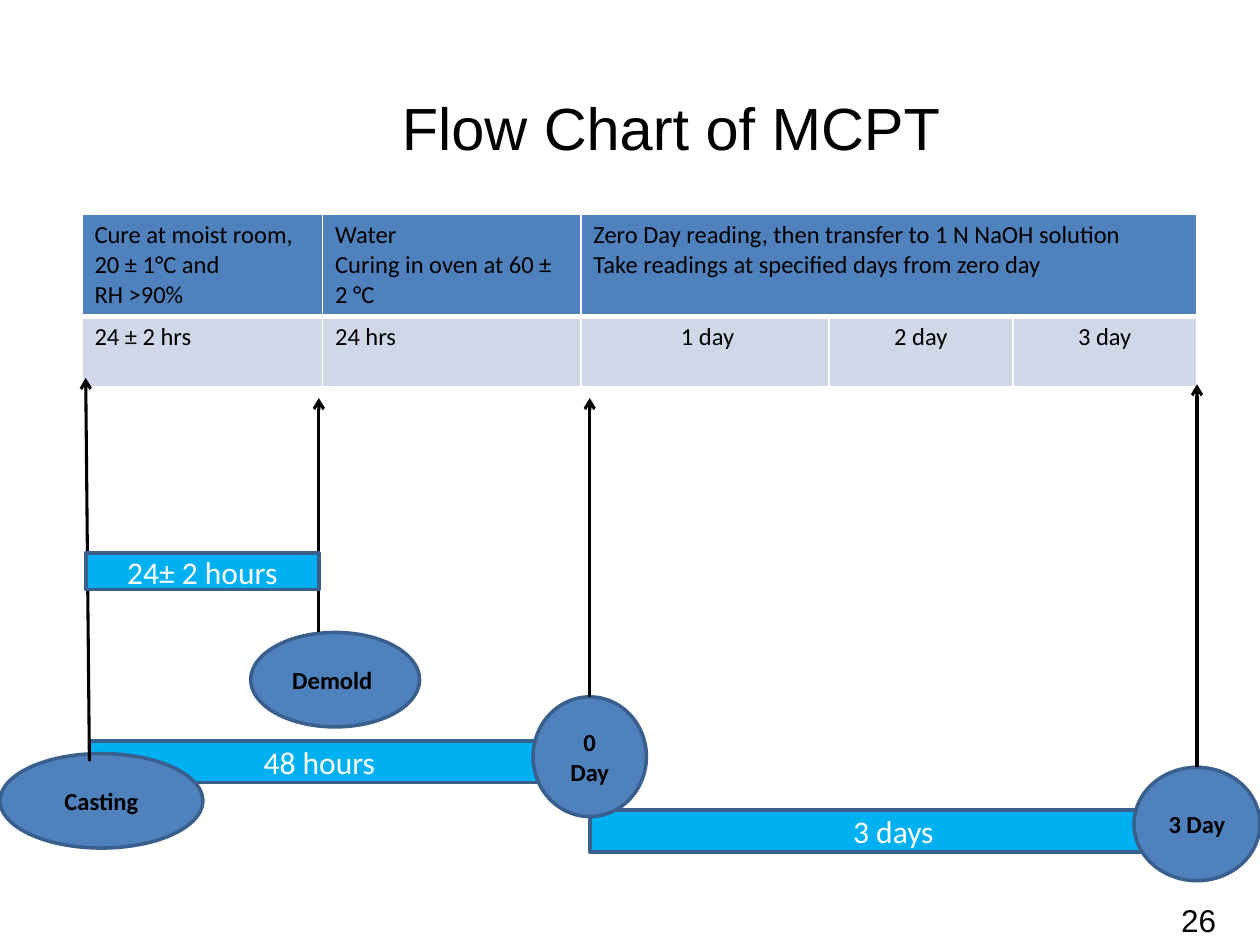
from dataclasses import dataclass

from pptx import Presentation
from pptx.dml.color import RGBColor
from pptx.enum.shapes import MSO_CONNECTOR, MSO_SHAPE
from pptx.enum.text import MSO_ANCHOR, MSO_AUTO_SIZE, PP_ALIGN
from pptx.oxml import parse_xml
from pptx.oxml.ns import nsdecls
from pptx.oxml.xmlchemy import OxmlElement
from pptx.util import Pt

STRAIGHT = MSO_CONNECTOR.STRAIGHT
RECTANGLE, OVAL = MSO_SHAPE.RECTANGLE, MSO_SHAPE.OVAL
LEFT, CENTER, RIGHT = PP_ALIGN.LEFT, PP_ALIGN.CENTER, PP_ALIGN.RIGHT
TOP, MIDDLE = MSO_ANCHOR.TOP, MSO_ANCHOR.MIDDLE

BLACK = RGBColor(0x00, 0x00, 0x00)
WHITE = RGBColor(0xFF, 0xFF, 0xFF)
BLUE = RGBColor(0x4F, 0x81, 0xBD)
PALE_BLUE = RGBColor(0xD0, 0xD8, 0xE8)
SKY = RGBColor(0x00, 0xB0, 0xF0)
OUTLINE = RGBColor(0x3A, 0x5F, 0x8C)

COLUMN_WIDTHS = (137.5, 147.6, 141.8, 105.1, 105.1)
ROW_HEIGHTS = (58.3, 40.3)
TABLE_ROWS = (
    (
        "Cure at moist room, 20 ± 1°C and\nRH >90%",
        "Water\nCuring in oven at 60 ± 2 °C",
        "Zero Day reading, then transfer to 1 N NaOH solution\n"
        "Take readings at specified days from zero day",
    ),
    ("24 ± 2 hrs", "24 hrs", " 1 day", "2 day", "3 day"),
)


@dataclass(frozen=True)
class Box:
    """A labelled bar or event; all lengths are in points."""
    text: str
    left: float
    top: float
    width: float
    height: float


@dataclass(frozen=True)
class Arrow:
    start_x: float
    start_y: float
    end_x: float
    end_y: float


THREE_DAYS = Box("3 days", 337, 463, 347, 23.8)
TWO_DAYS = Box("48 hours", 51.1, 423.4, 262.8, 23.8)
ONE_DAY = Box("24± 2 hours", 49, 316.1, 133.2, 20.9)

DEMOLD = Box("Demold ", 143.3, 361.4, 96.5, 54)
CASTING = Box("Casting", 0, 430.6, 115.9, 54)
ZERO_DAY = Box("0 Day", 304.6, 398.2, 64.8, 68.4)
THIRD_DAY = Box("3 Day", 648, 438.5, 72, 64.8)

CASTING_ARROW = Arrow(51.1, 434.9, 49, 216)
DEMOLD_ARROW = Arrow(182.2, 361.4, 182.2, 227.5)
ZERO_DAY_ARROW = Arrow(337, 398.2, 337, 227.5)
THIRD_DAY_ARROW = Arrow(684, 438.5, 684, 219.6)


def write_text(text_frame, text: str, *, size: float, font: str = "Calibri",
               color: RGBColor = BLACK, bold: bool = False,
               align=LEFT, anchor=TOP, wrap: bool = True) -> None:
    text_frame.text = text
    text_frame.word_wrap = wrap
    text_frame.vertical_anchor = anchor
    for paragraph in text_frame.paragraphs:
        paragraph.alignment = align
        paragraph.font.name = font
        paragraph.font.size = Pt(size)
        paragraph.font.bold = bold
        paragraph.font.color.rgb = color


def place(shape, left: float, top: float, width: float, height: float) -> None:
    shape.left, shape.top = Pt(left), Pt(top)
    shape.width, shape.height = Pt(width), Pt(height)


def add_box(slide, box: Box, kind, fill: RGBColor, **text_format):
    shape = slide.shapes.add_shape(
        kind, Pt(box.left), Pt(box.top), Pt(box.width), Pt(box.height))
    shape.shadow.inherit = False
    shape.fill.solid()
    shape.fill.fore_color.rgb = fill
    shape.line.color.rgb = OUTLINE
    shape.line.width = Pt(2)
    write_text(shape.text_frame, box.text, align=CENTER, anchor=MIDDLE, **text_format)
    return shape


def add_bar(slide, box: Box):
    return add_box(slide, box, RECTANGLE, SKY, size=18, color=WHITE)


def add_event(slide, box: Box):
    return add_box(slide, box, OVAL, BLUE, size=14, bold=True)


def add_arrow(slide, arrow: Arrow, source=None) -> None:
    connector = slide.shapes.add_connector(
        STRAIGHT, Pt(arrow.start_x), Pt(arrow.start_y), Pt(arrow.end_x), Pt(arrow.end_y))
    if source is not None:
        connector.begin_connect(source, 0)
    connector.line.color.rgb = BLACK
    connector.line.width = Pt(1.75)
    head = OxmlElement("a:tailEnd")
    head.set("type", "arrow")
    connector.line._get_or_add_ln().append(head)
    connector._element.spPr.append(OxmlElement("a:effectLst"))


def set_borders(cell, bottom_width: float, top_width: float) -> None:
    properties = cell._tc.get_or_add_tcPr()
    widths = (("lnL", 1), ("lnR", 1), ("lnT", top_width), ("lnB", bottom_width))
    for index, (side, width) in enumerate(widths):
        properties.insert(index, parse_xml(
            f'<a:{side} {nsdecls("a")} w="{Pt(width)}"><a:solidFill>'
            f'<a:srgbClr val="{WHITE}"/></a:solidFill></a:{side}>'))


def add_schedule(slide) -> None:
    table = slide.shapes.add_table(
        len(ROW_HEIGHTS), len(COLUMN_WIDTHS), Pt(46.8), Pt(122.4),
        Pt(sum(COLUMN_WIDTHS)), Pt(sum(ROW_HEIGHTS))).table
    for column, width in zip(table.columns, COLUMN_WIDTHS):
        column.width = Pt(width)
    for row, height in zip(table.rows, ROW_HEIGHTS):
        row.height = Pt(height)
    table.cell(0, 2).merge(table.cell(0, 4))

    for row_index, row in enumerate(table.rows):
        is_header = row_index == 0
        for cell in row.cells:
            cell.fill.solid()
            cell.fill.fore_color.rgb = BLUE if is_header else PALE_BLUE
            set_borders(cell, 3 if is_header else 1, 1 if is_header else 3)
        for column_index, text in enumerate(TABLE_ROWS[row_index]):
            is_reading = not is_header and column_index >= 2
            write_text(table.cell(row_index, column_index).text_frame, text,
                       size=14, align=CENTER if is_reading else LEFT)


def main() -> None:
    presentation = Presentation()
    presentation.slide_width, presentation.slide_height = Pt(720), Pt(540)
    slide = presentation.slides.add_slide(presentation.slide_layouts[5])

    # Title
    title = slide.shapes.title
    place(title, 222.5, 48.2, 334.1, 48.2)
    write_text(title.text_frame, "Flow Chart of MCPT", size=34, font="Arial", wrap=False)
    title.text_frame.auto_size = MSO_AUTO_SIZE.SHAPE_TO_FIT_TEXT

    # Long bars lie behind the events
    add_bar(slide, THREE_DAYS)
    add_bar(slide, TWO_DAYS)
    add_schedule(slide)

    # Events and their arrows up to the table
    add_event(slide, DEMOLD)
    add_event(slide, CASTING)
    add_arrow(slide, CASTING_ARROW)
    zero_day = add_event(slide, ZERO_DAY)
    add_arrow(slide, DEMOLD_ARROW)
    add_arrow(slide, ZERO_DAY_ARROW, zero_day)
    third_day = add_event(slide, THIRD_DAY)
    add_arrow(slide, THIRD_DAY_ARROW, third_day)

    # The first bar lies over the arrows
    add_bar(slide, ONE_DAY)

    # Page number
    number = slide.shapes.add_textbox(Pt(558), Pt(511.2), Pt(144), Pt(28.8))
    write_text(number.text_frame, "26", size=18, font="Arial", align=RIGHT)

    presentation.save("out.pptx")


if __name__ == "__main__":
    main()
